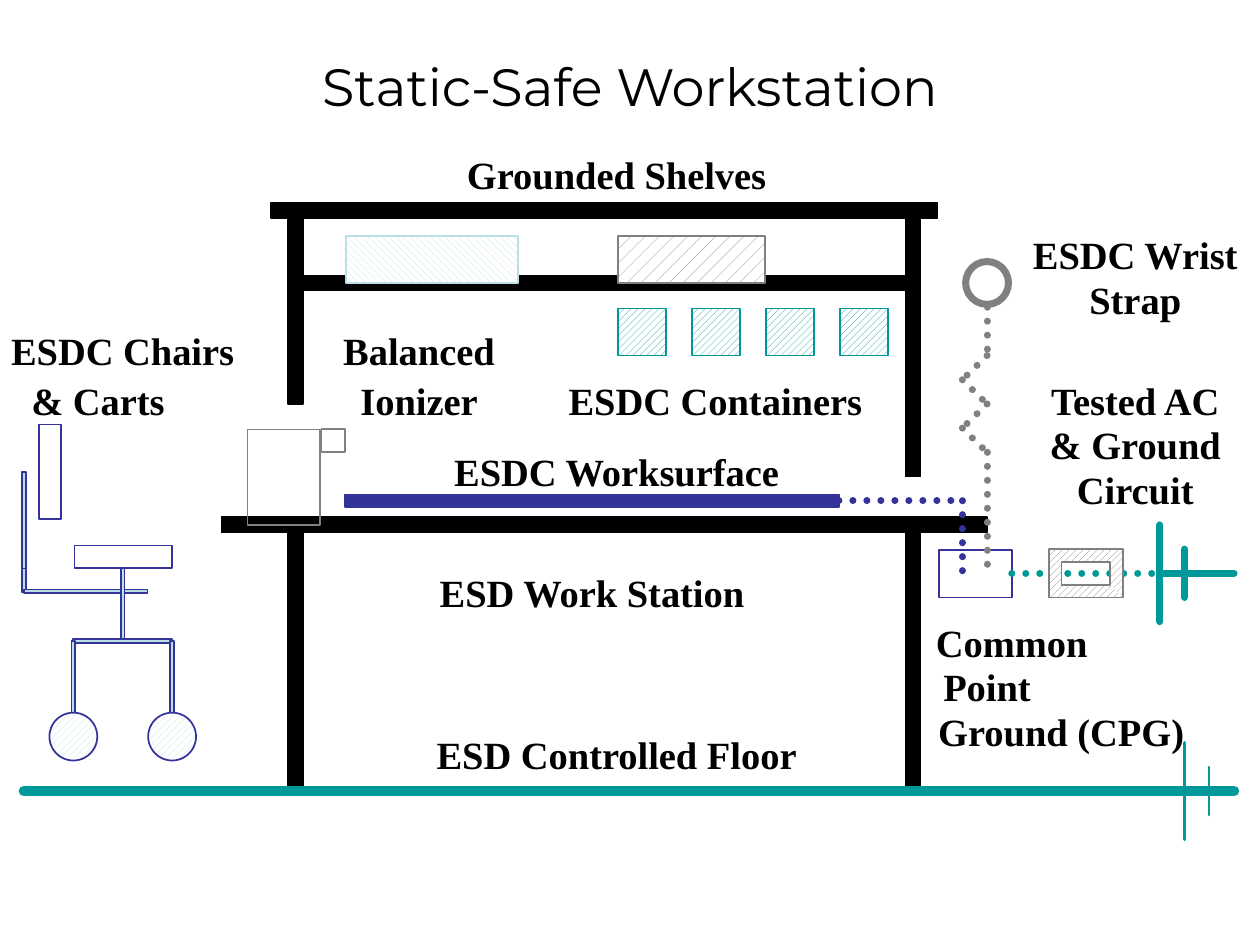
from dataclasses import dataclass
from itertools import pairwise
from typing import NamedTuple

from lxml import etree
from pptx import Presentation, util as u
from pptx.dml.color import RGBColor
from pptx.enum import dml, shapes, text
from pptx.oxml.ns import qn

RECT, OVAL = shapes.MSO_SHAPE.RECTANGLE, shapes.MSO_SHAPE.OVAL
UP = dml.MSO_PATTERN.WIDE_UPWARD_DIAGONAL
DOWN = dml.MSO_PATTERN.WIDE_DOWNWARD_DIAGONAL
SPECKLE = dml.MSO_PATTERN.PERCENT_10


@dataclass(frozen=True)
class Theme:
    ink: str = "000000"
    paper: str = "FFFFFF"
    navy: str = "333399"
    teal: str = "009999"
    gray: str = "808080"
    pale: str = "BBE0E3"
    title_font: str = "Montserrat"
    label_font: str = "Times New Roman"
    title_size: int = 30
    label_size: int = 22


@dataclass(frozen=True)
class Grid:
    left: float = 0.19
    top: float = 1.67
    col: float = 0.196
    row: float = 0.192

    def x(self, c: float) -> int:
        return u.Inches(self.left + c * self.col)

    def y(self, r: float) -> int:
        return u.Inches(self.top + r * self.row)


class Bar(NamedTuple):
    """A straight beam centred on the grid line from start to end."""
    c0: float
    r0: float
    c1: float
    r1: float


class Box(NamedTuple):
    c0: float
    r0: float
    c1: float
    r1: float
    line: str
    pattern: object = None
    ink: str = ""


class Wire(NamedTuple):
    points: list
    color: str
    width: float
    dotted: bool = False


class Label(NamedTuple):
    words: str
    col: float
    row: float
    cols: float


T, G = Theme(), Grid()
rgb = RGBColor.from_string


def paint(sp, fill: str = "", line: str = "", pattern=None, width: float = 1) -> None:
    sp.shadow.inherit = False
    if pattern is not None:
        sp.fill.patterned()
        sp.fill.pattern = pattern
        sp.fill.fore_color.rgb = rgb(fill)
        sp.fill.back_color.rgb = rgb(T.paper)
    elif fill:
        sp.fill.solid()
        sp.fill.fore_color.rgb = rgb(fill)
    else:
        sp.fill.background()
    if line:
        sp.line.color.rgb = rgb(line)
        sp.line.width = u.Pt(width)
    else:
        sp.line.fill.background()


def draw_bar(tree, bar: Bar, thick: float, fill: str, line: str) -> None:
    x, y = G.x(bar.c0), G.y(bar.r0)
    w, h = G.x(bar.c1) - x, G.y(bar.r1) - y
    t = u.Inches(thick)
    if w:
        sp = tree.add_shape(RECT, x, y - t // 2, w, t)
    else:
        sp = tree.add_shape(RECT, x - t // 2, y, t, h)
    paint(sp, fill, line)


def draw_box(tree, b: Box) -> None:
    x, y = G.x(b.c0), G.y(b.r0)
    trim = u.Inches(0.01)
    sp = tree.add_shape(RECT, x + trim, y + trim,
                        G.x(b.c1) - x - trim, G.y(b.r1) - y - trim)
    paint(sp, b.ink, b.line, b.pattern)


def draw_circle(tree, c: float, r: float, size: float, **style) -> None:
    d = u.Inches(size)
    paint(tree.add_shape(OVAL, G.x(c) - d // 2, G.y(r) - d // 2, d, d), **style)


def draw_wire(tree, wire: Wire) -> None:
    for (c0, r0), (c1, r1) in pairwise(wire.points):
        cn = tree.add_connector(shapes.MSO_CONNECTOR.STRAIGHT,
                                G.x(c0), G.y(r0), G.x(c1), G.y(r1))
        cn.line.color.rgb = rgb(wire.color)
        cn.line.width = u.Pt(wire.width)
        if wire.dotted:
            cn.line.dash_style = dml.MSO_LINE.ROUND_DOT
        cn.line._get_or_add_ln().set("cap", "rnd")
        etree.SubElement(cn._element.spPr, qn("a:effectLst"))


def draw_outlet(tree, c0: float, r0: float, c1: float, r1: float) -> None:
    """Hatched frame of four mitred sides, with an outer and inner outline."""
    grp = tree.add_group_shape().shapes
    m = u.Inches(0.1)
    l, t, r, b = G.x(c0), G.y(r0), G.x(c1), G.y(r1)
    outer = [(l, t), (r, t), (r, b), (l, b)]
    inner = [(l + m, t + m), (r - m, t + m), (r - m, b - m), (l + m, b - m)]
    sides = [[outer[i], outer[(i + 1) % 4], inner[(i + 1) % 4], inner[i]] for i in range(4)]
    styles = [dict(fill=T.gray, pattern=UP)] * 4 + [dict(line=T.gray)] * 2
    for points, style in zip(sides + [outer, inner], styles):
        fb = grp.build_freeform(*points[0])
        fb.add_line_segments(points[1:], close=True)
        paint(fb.convert_to_shape(), **style)


def draw_label(tree, label: Label) -> None:
    w, h = u.Inches(label.cols * G.col), u.Inches(0.47)
    tf = tree.add_textbox(G.x(label.col) - w // 2, G.y(label.row) - h // 2, w, h).text_frame
    tf.word_wrap = False
    tf.auto_size = text.MSO_AUTO_SIZE.SHAPE_TO_FIT_TEXT
    tf.margin_left = tf.margin_right = u.Inches(0.05)  # room so no word breaks
    set_text(tf, label.words, T.label_font, T.label_size, True)


def set_text(tf, words: str, font: str, size: int, bold: bool) -> None:
    tf.text = words
    p = tf.paragraphs[0]
    p.alignment = text.PP_ALIGN.CENTER
    p.font.name, p.font.size, p.font.bold = font, u.Pt(size), bold
    p.font.color.rgb = rgb(T.ink)


BENCH = [Bar(8, 13, 39, 13), Bar(36, 13, 36, 24), Bar(11, 13, 11, 24),
         Bar(11, 3, 36, 3), Bar(11, 0, 11, 8), Bar(36, 0, 36, 11), Bar(10, 0, 37, 0)]
CHAIR = [Bar(0, 10.8, 0, 14.8), Bar(0, 14.8, 0, 15.8), Bar(0, 15.75, 5, 15.75),
         Bar(4, 14.8, 4, 17.8), Bar(2, 17.8, 6, 17.8),
         Bar(6, 17.8, 6, 20.8), Bar(2, 17.8, 2, 20.8)]
BOXES = [Box(37, 14, 40, 16, T.navy),  # common point ground
         Box(0.56, 8.8, 1.5, 12.75, T.navy), Box(2, 13.8, 6, 14.8, T.navy),  # chair
         Box(9, 9, 12, 13, T.gray), Box(12, 9, 13, 10, T.gray),  # ionizer
         *[Box(c, 4, c + 2, 6, T.teal, UP, T.teal) for c in (24, 27, 30, 33)],
         Box(24, 1, 30, 3, T.gray, SPECKLE, T.gray),
         Box(13, 1, 20, 3, T.pale, DOWN, T.pale)]
WIRES = [Wire([(0, 24), (49, 24)], T.teal, 6),  # floor
         Wire([(40, 15), (46, 15)], T.teal, 4, True),
         Wire([(46, 13), (46, 17)], T.teal, 4),
         Wire([(47, 14), (47, 16)], T.teal, 4),
         Wire([(46, 15), (49, 15)], T.teal, 4),
         Wire([(48, 23), (48, 25)], T.teal, 1),
         Wire([(47, 22), (47, 26)], T.teal, 2),
         Wire([(33, 12), (38, 12), (38, 15)], T.navy, 4, True),
         Wire([(39, 4), (39, 6), (38, 7), (39, 8), (38, 9), (39, 10), (39, 15)],
              T.gray, 4, True)]  # wrist strap cord
LABELS = [Label("Grounded Shelves", 24, -1.48, 13.2), Label("Balanced", 16, 5.8, 7.2),
          Label("Ionizer", 16, 7.84, 5.8), Label("ESDC Containers", 28, 7.84, 12.9),
          Label("ESDC Worksurface", 24, 10.8, 14.3), Label("ESD Work Station", 23, 15.8, 13.5),
          Label("ESD Controlled Floor", 24, 22.47, 15.7),
          Label("ESDC Chairs", 4, 5.8, 10.1), Label("& Carts", 3, 7.84, 6.5),
          Label("ESDC Wrist", 45, 1.8, 9.4), Label("Strap", 45, 3.67, 4.8),
          Label("Tested AC", 45, 7.84, 8.1), Label("& Ground", 45, 9.66, 8),
          Label("Circuit", 45, 11.54, 5.8), Label("Common", 40, 17.84, 7.2),
          Label("Point", 39, 19.66, 4.6), Label("Ground (CPG)", 42, 21.54, 11)]


def main() -> None:
    prs = Presentation()
    prs.slide_width, prs.slide_height = u.Inches(10), u.Inches(7.5)
    s = prs.slides.add_slide(prs.slide_layouts[5])
    tree = s.shapes

    # Title
    title = tree.title
    title.left, title.width = int(prs.slide_width * 0.11), int(prs.slide_width * 0.78)
    title.top, title.height = int(prs.slide_height * 0.04), int(prs.slide_height * 0.1)
    title.text_frame.vertical_anchor = text.MSO_ANCHOR.MIDDLE
    set_text(title.text_frame, "Static-Safe Workstation", T.title_font, T.title_size, False)

    # Bench, worksurface and chair frame
    for bar in BENCH:
        draw_bar(tree, bar, 0.12, T.ink, T.ink)
    draw_bar(tree, Bar(13, 12, 33, 12), 0.1, T.navy, T.navy)
    for bar in CHAIR:
        draw_bar(tree, bar, 0.03, T.pale, T.navy)

    # Equipment, wiring and ground symbols
    for box in BOXES:
        draw_box(tree, box)
    for wire in WIRES:
        draw_wire(tree, wire)
    draw_outlet(tree, 41.5, 14, 44.5, 16)
    draw_circle(tree, 39, 3, 0.34, line=T.gray, width=4)
    for col in (2, 6):
        draw_circle(tree, col, 21.75, 0.38, fill=T.pale, line=T.navy, pattern=UP)

    # Labels
    for label in LABELS:
        draw_label(tree, label)
    prs.save("out.pptx")


if __name__ == "__main__":
    main()
